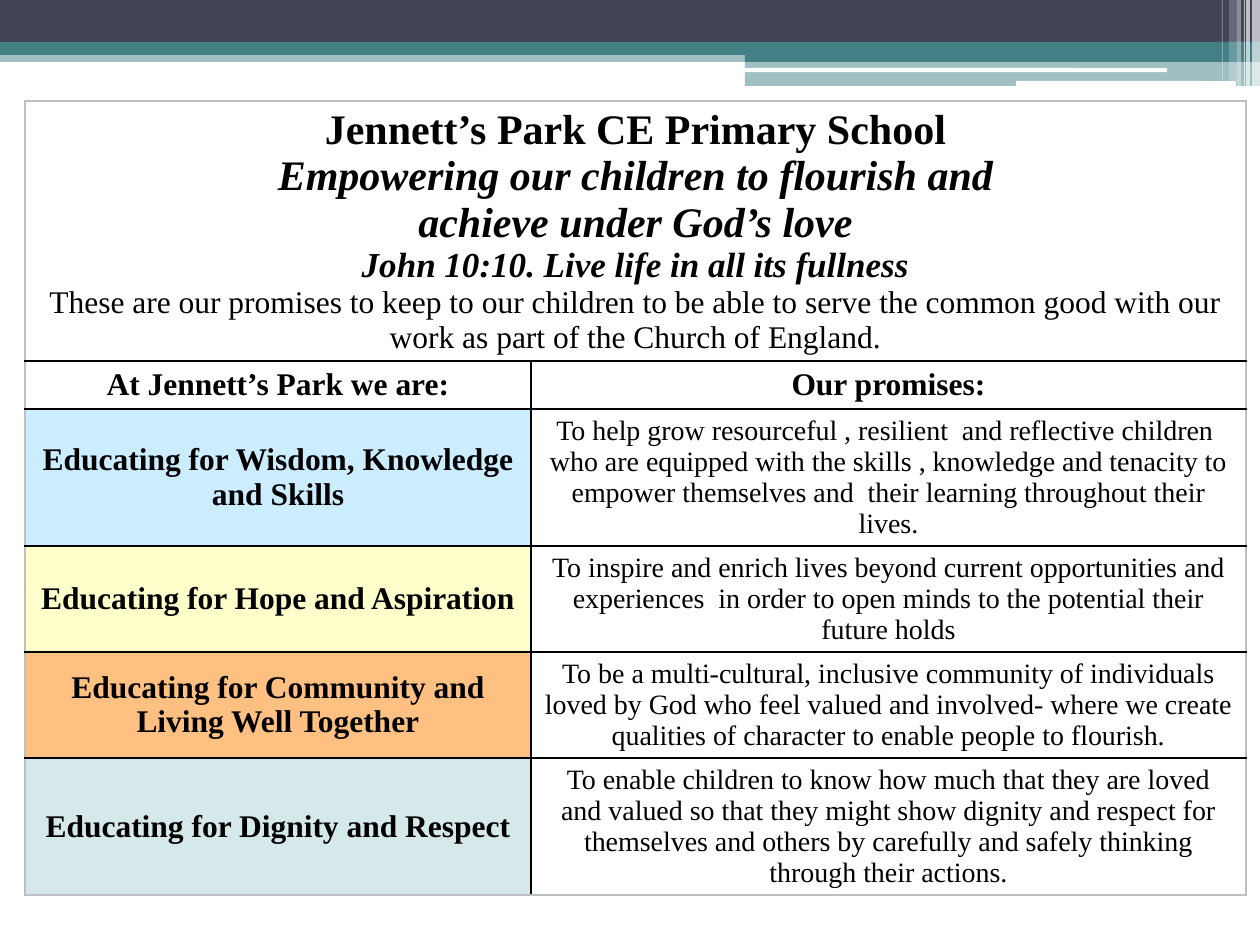
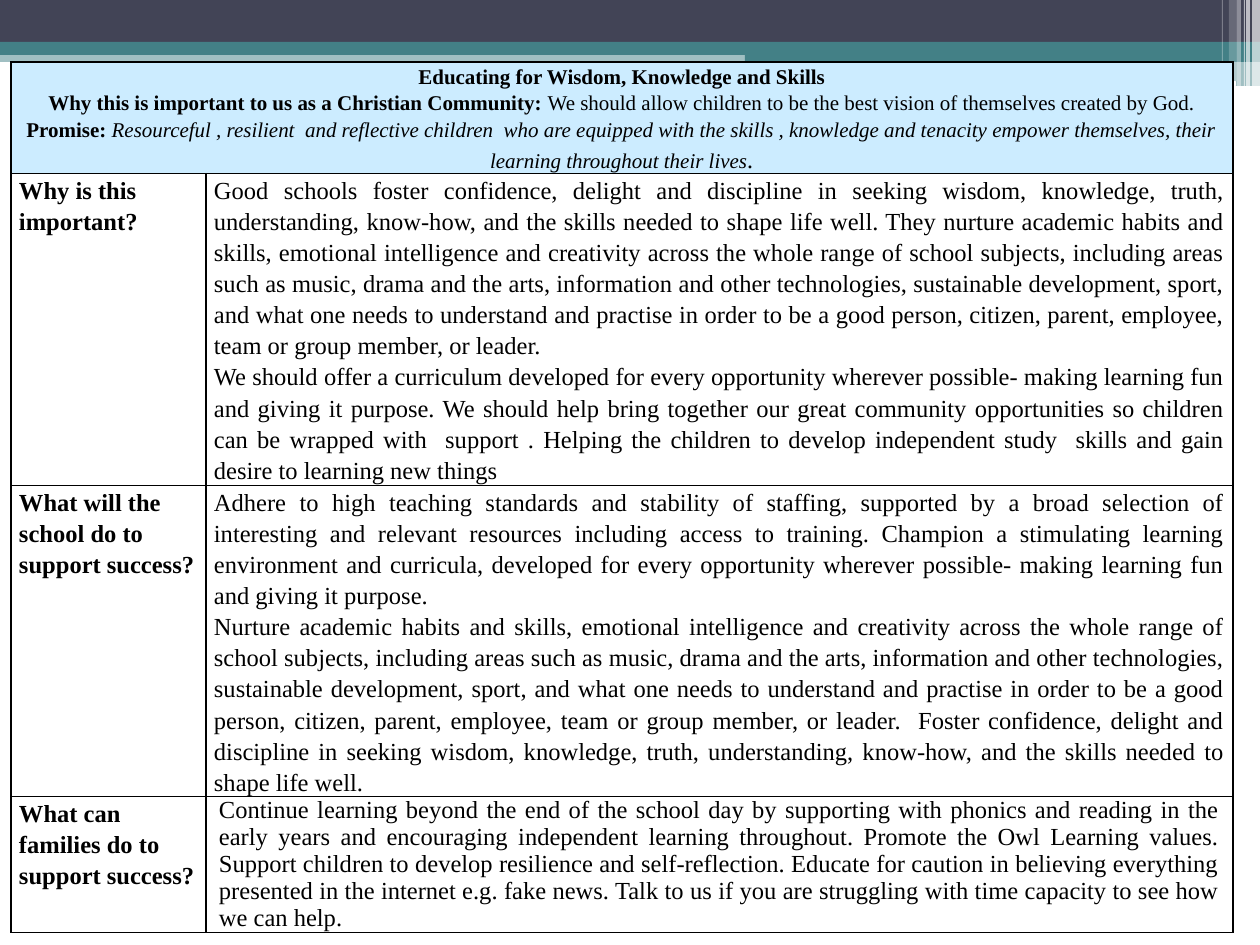
from lxml.etree import SubElement
from pptx import Presentation
from pptx.dml.color import RGBColor
from pptx.enum.shapes import MSO_SHAPE
from pptx.enum.text import MSO_ANCHOR, PP_ALIGN
from pptx.oxml import parse_xml
from pptx.oxml.ns import nsdecls, qn
from pptx.util import Emu, Pt

EMU_PER_PX = 914400 / 126
FONT = "Times New Roman"

BLACK = RGBColor(0x00, 0x00, 0x00)
WHITE = RGBColor(0xFF, 0xFF, 0xFF)
GREY = RGBColor(0xBF, 0xBF, 0xBF)
NAVY = RGBColor(0x42, 0x44, 0x56)
TEAL = RGBColor(0x43, 0x80, 0x86)
SKY = RGBColor(0xCC, 0xEC, 0xFF)
CREAM = RGBColor(0xFF, 0xFF, 0xCC)
ORANGE = RGBColor(0xFF, 0xC0, 0x81)
MIST = RGBColor(0xD6, 0xE9, 0xEA)

# Text formats
BOLD = {"bold": True}
ITALIC = {"italic": True}
BOLD_ITALIC = {"bold": True, "italic": True}

# Cell formats: margins are left/right and top/bottom in px
PROMISE_CELL = {"margins": (13, 6), "anchor": MSO_ANCHOR.MIDDLE,
                "align": PP_ALIGN.CENTER, "spacing": 1.0}
HEADING_CELL = {"margins": (8, 0), "anchor": MSO_ANCHOR.TOP,
                "align": PP_ALIGN.CENTER, "spacing": 1.15}
QUESTION_CELL = HEADING_CELL | {"align": PP_ALIGN.LEFT}
ANSWER_CELL = HEADING_CELL | {"align": PP_ALIGN.JUSTIFY}
FAMILY_CELL = ANSWER_CELL | {"margins": (13, 0), "spacing": 1.0}

# Header decoration: left, top, width, height, colour, opacity in percent
BANDS = [
    (0, 50, 1260, 12, TEAL, 50),
    (0, 0, 1260, 43, NAVY, 100),
    (0, 42, 1260, 13, TEAL, 100),
    (745, 49, 515, 13, TEAL, 100),
    (745, 61, 515, 25, TEAL, 50),
]
WHITE_BARS = [(745, 68, 422, 4), (1016, 81, 220, 5)]
# Corner stripes: left, width, height, opacity
STRIPES = [(1252, 8, 86, 65), (1246, 4, 86, 65), (1244, 1, 86, 60),
           (1237, 4, 86, 40), (1229, 8, 81, 20), (1222, 1, 81, 30)]

SCHOOL_HEADING = [
    [("Jennett’s Park CE Primary School", 24, BOLD)],
    [("Empowering our children to flourish and", 24, BOLD_ITALIC)],
    [("achieve under God’s love", 24, BOLD_ITALIC)],
    [("John 10:10. Live life in all its fullness", 20, BOLD_ITALIC)],
    [("These are our promises to keep to our children to be able to serve the "
      "common good with our work as part of the Church of England.", 18, {})],
]
PROMISES = [
    ("Educating for Wisdom, Knowledge and Skills", SKY,
     "To help grow resourceful , resilient  and reflective children  who are "
     "equipped with the skills , knowledge and tenacity to empower themselves "
     "and  their learning throughout their lives."),
    ("Educating for Hope and Aspiration", CREAM,
     "To inspire and enrich lives beyond current opportunities and experiences  "
     "in order to open minds to the potential their future holds"),
    ("Educating for Community and Living Well Together", ORANGE,
     "To be a multi-cultural, inclusive community of individuals loved by God "
     "who feel valued and involved- where we create qualities of character to "
     "enable people to flourish."),
    ("Educating for Dignity and Respect", MIST,
     "To enable children to know how much that they are loved and valued so that "
     "they might show dignity and respect for themselves and others by carefully "
     "and safely thinking through their actions."),
]

WISDOM_HEADING = [
    [("Educating for Wisdom, Knowledge and Skills", 12, BOLD)],
    [("Why this is important to us as a Christian Community: ", 12, BOLD),
     ("We should allow children to be the best vision of themselves created by "
      "God.", 12, {})],
    [("Promise: ", 12, BOLD),
     ("Resourceful , resilient  and reflective children  who are equipped with "
      "the skills , knowledge and tenacity empower themselves, their learning "
      "throughout their lives", 12, ITALIC),
     (".", 14, ITALIC)],
]
# Question, cell format of the answer, answer paragraphs
QUESTIONS = [
    ("Why is this important?", ANSWER_CELL, [
        "Good schools foster confidence, delight and discipline in seeking "
        "wisdom, knowledge, truth, understanding, know-how, and the skills needed "
        "to shape life well. They nurture academic habits and skills, emotional "
        "intelligence and creativity across the whole range of school subjects, "
        "including areas such as music, drama and the arts, information and other "
        "technologies, sustainable development, sport, and what one needs to "
        "understand and practise in order to be a good person, citizen, parent, "
        "employee, team or group member, or leader.",
        "We should offer a curriculum developed for every opportunity wherever "
        "possible- making learning fun and giving it purpose. We should help "
        "bring together our great community opportunities so children can be "
        "wrapped with  support . Helping the children to develop independent "
        "study  skills and gain desire to learning new things"]),
    ("What will the school do to support success?", ANSWER_CELL, [
        "Adhere to high teaching standards and stability of staffing, supported "
        "by a broad selection of interesting and relevant resources including "
        "access to training. Champion a stimulating learning environment and "
        "curricula, developed for every opportunity wherever possible- making "
        "learning fun and giving it purpose.",
        "Nurture academic habits and skills, emotional intelligence and "
        "creativity across the whole range of school subjects, including areas "
        "such as music, drama and the arts, information and other technologies, "
        "sustainable development, sport, and what one needs to understand and "
        "practise in order to be a good person, citizen, parent, employee, team "
        "or group member, or leader.  Foster confidence, delight and discipline "
        "in seeking wisdom, knowledge, truth, understanding, know-how, and the "
        "skills needed to shape life well."]),
    ("What can families do to support success?", FAMILY_CELL, [
        "Continue learning beyond the end of the school day by supporting with "
        "phonics and reading in the early years and encouraging independent "
        "learning throughout. Promote the Owl Learning values. Support children "
        "to develop resilience and self-reflection. Educate for caution in "
        "believing everything presented in the internet e.g. fake news. Talk to "
        "us if you are struggling with time capacity to see how we can help."]),
]


def px(length):
    return Emu(round(length * EMU_PER_PX))


def add_block(slide, box, color, opacity=100, kind=MSO_SHAPE.RECTANGLE):
    shape = slide.shapes.add_shape(kind, *map(px, box))
    shape.shadow.inherit = False
    shape.line.fill.background()
    shape.fill.solid()
    shape.fill.fore_color.rgb = color
    if opacity < 100:
        color_element = shape.element.spPr.find(".//" + qn("a:srgbClr"))
        SubElement(color_element, qn("a:alpha"), val=str(opacity * 1000))


def draw_header(slide):
    for *box, color, opacity in BANDS:
        add_block(slide, box, color, opacity)
    for box in WHITE_BARS:
        add_block(slide, box, WHITE, kind=MSO_SHAPE.ROUNDED_RECTANGLE)
    for left, width, height, opacity in STRIPES:
        add_block(slide, (left, 0, width, height), WHITE, opacity)


def move_to_layout(slide):
    """Hand the shapes on the slide to its layout, so every slide shows them."""
    layout = slide.slide_layout
    for placeholder in list(layout.placeholders):
        layout.shapes.element.remove(placeholder.element)
    for shape in list(slide.shapes):
        layout.shapes.element.append(shape.element)


def set_borders(cell, colors):
    properties = cell._tc.get_or_add_tcPr()
    for index, side in enumerate("LRTB"):
        properties.insert(index, parse_xml(
            f'<a:ln{side} w="12700" {nsdecls("a")}><a:solidFill>'
            f'<a:srgbClr val="{colors[side]}"/></a:solidFill></a:ln{side}>'))


def fill_cell(cell, paragraphs, cell_format, color=None):
    side, top = map(px, cell_format["margins"])
    settings = {"margin_left": side, "margin_right": side, "margin_top": top,
                "margin_bottom": top, "vertical_anchor": cell_format["anchor"]}
    for name, value in settings.items():
        setattr(cell, name, value)
    if color is not None:
        cell.fill.solid()
        cell.fill.fore_color.rgb = color
    frame = cell.text_frame
    for index, runs in enumerate(paragraphs):
        paragraph = frame.add_paragraph() if index else frame.paragraphs[0]
        paragraph.alignment = cell_format["align"]
        paragraph.line_spacing = cell_format["spacing"]
        for text, size, style in runs:
            run = paragraph.add_run()
            run.text = text
            font = {"name": FONT, "size": Pt(size), "bold": False,
                    "italic": False} | style
            for name, value in font.items():
                setattr(run.font, name, value)
            run.font.color.rgb = BLACK


def add_grid(slide, left, top, widths, heights, edge_color):
    """Add an unfilled ruled table whose first row is one merged cell."""
    rows, columns = len(heights), len(widths)
    table = slide.shapes.add_table(rows, columns, px(left), px(top),
                                   px(sum(widths)), px(sum(heights))).table
    table.first_row = table.horz_banding = False
    for column, width in zip(table.columns, widths):
        column.width = px(width)
    for row, height in zip(table.rows, heights):
        row.height = px(height)
    for r in range(rows):
        for c in range(columns):
            at_edge = {"L": c == 0, "R": c == columns - 1 or r == 0,
                       "T": r == 0, "B": r == rows - 1}
            cell = table.cell(r, c)
            cell.fill.background()
            set_borders(cell, {side: edge_color if edge else BLACK
                               for side, edge in at_edge.items()})
    table.cell(0, 0).merge(table.cell(0, columns - 1))
    return table


def add_promises(slide):
    table = add_grid(slide, 25, 101, (506, 715),
                     (260, 48, 137, 106, 106, 137), GREY)
    fill_cell(table.cell(0, 0), SCHOOL_HEADING, PROMISE_CELL)
    for column, label in enumerate(("At Jennett’s Park we are:", "Our promises:")):
        fill_cell(table.cell(1, column), [[(label, 18, BOLD)]], PROMISE_CELL)
    for row, (aim, color, promise) in enumerate(PROMISES, start=2):
        fill_cell(table.cell(row, 0), [[(aim, 18, BOLD)]], PROMISE_CELL, color)
        fill_cell(table.cell(row, 1), [[(promise, 16, {})]], PROMISE_CELL)


def add_questions(slide):
    table = add_grid(slide, 11, 62, (195, 1027), (111, 312, 311, 136), BLACK)
    fill_cell(table.cell(0, 0), WISDOM_HEADING, HEADING_CELL, SKY)
    for row, (question, answer_format, answers) in enumerate(QUESTIONS, start=1):
        fill_cell(table.cell(row, 0), [[(question, 14, BOLD)]], QUESTION_CELL)
        fill_cell(table.cell(row, 1), [[(answer, 14, {})] for answer in answers],
                  answer_format)


def main():
    presentation = Presentation()
    presentation.slide_width, presentation.slide_height = px(1260), px(945)
    blank_layout = presentation.slide_layouts[6]

    # Our promises, with the header drawn once for both slides
    promises_slide = presentation.slides.add_slide(blank_layout)
    draw_header(promises_slide)
    move_to_layout(promises_slide)
    add_promises(promises_slide)

    # Wisdom, knowledge and skills
    add_questions(presentation.slides.add_slide(blank_layout))

    presentation.save("out.pptx")


if __name__ == "__main__":
    main()
